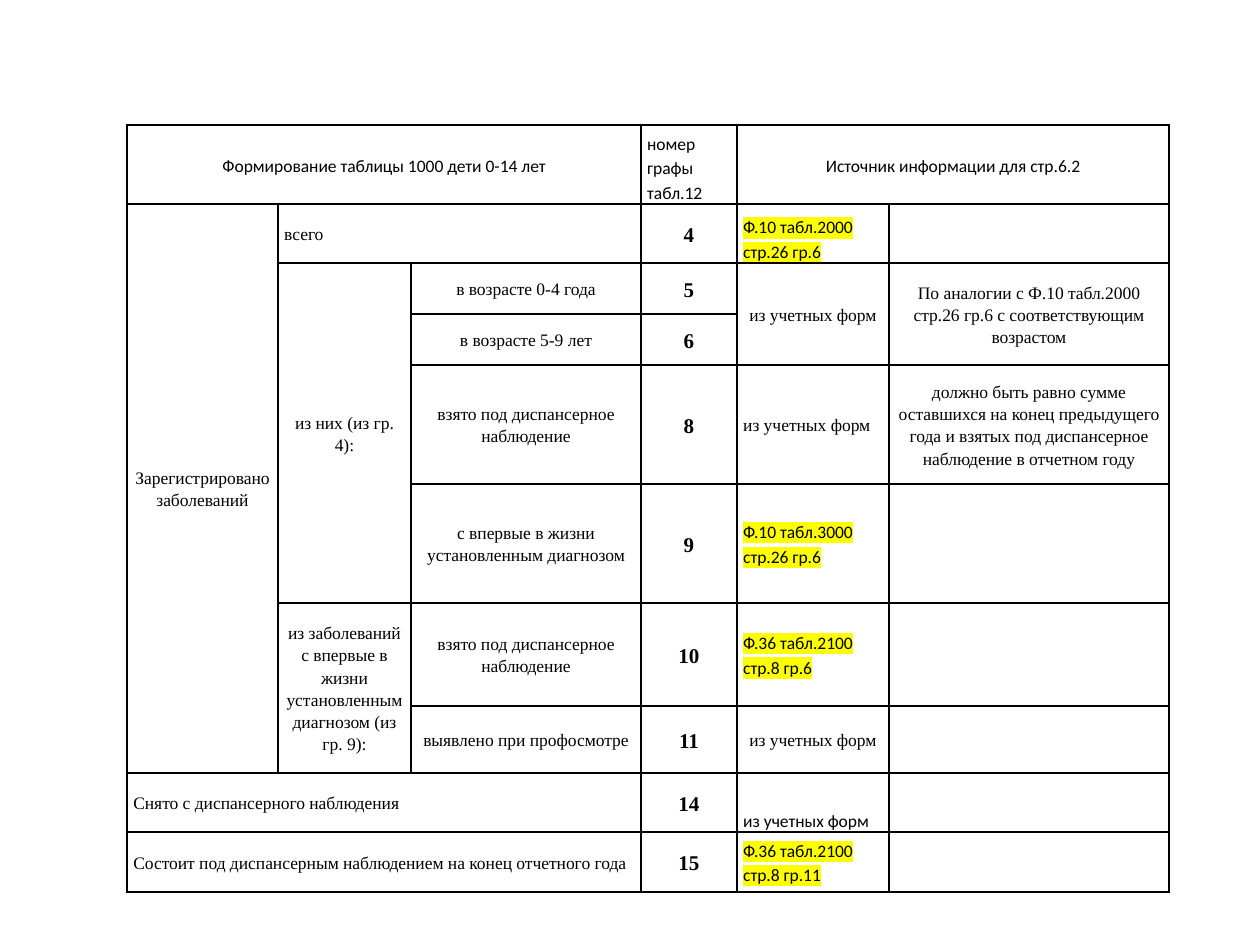
from lxml import etree
from pptx import Presentation, util as u
from pptx.dml.color import RGBColor
from pptx.enum import text
from pptx.oxml.ns import qn

PX = 914400 // 126
SANS, SERIF = "Calibri", "Times New Roman"
LEFT, CENTER = text.PP_ALIGN.LEFT, text.PP_ALIGN.CENTER
MIDDLE, BOTTOM = text.MSO_ANCHOR.MIDDLE, text.MSO_ANCHOR.BOTTOM
BLACK, YELLOW = "000000", "FFFF00"

COLS = [151, 133, 230, 96, 152, 280]
ROWS = [79, 59, 51, 51, 119, 119, 103, 67, 59, 60]

STYLES = {
    "head": (SANS, 10, False, CENTER, None),
    "plain": (SANS, 10, False, LEFT, None),
    "mark": (SANS, 10, False, LEFT, YELLOW),
    "label": (SERIF, 10, False, CENTER, None),
    "left": (SERIF, 10, False, LEFT, None),
    "number": (SERIF, 12, True, CENTER, None),
}
FORMS = "из учетных форм"
TAKEN = "взято под диспансерное наблюдение"

CELLS = [
    (0, 0, 1, 3, "head", "Формирование таблицы 1000 дети 0-14 лет"),
    (0, 3, 1, 1, "plain", "номер графы табл.12"),
    (0, 4, 1, 2, "head", "Источник информации для стр.6.2"),
    (1, 0, 7, 1, "label", "Зарегистрировано заболеваний"),
    (1, 1, 1, 2, "left", "всего"),
    (1, 4, 1, 1, "mark", "Ф.10 табл.2000 стр.26 гр.6"),
    (2, 1, 4, 1, "label", "из них (из гр. 4):"),
    (2, 2, 1, 1, "label", "в возрасте 0-4 года"),
    (2, 4, 2, 1, "label", FORMS),
    (2, 5, 2, 1, "label", "По аналогии с Ф.10 табл.2000 стр.26 гр.6 с соответствующим возрастом"),
    (3, 2, 1, 1, "label", "в возрасте 5-9 лет"),
    (4, 2, 1, 1, "label", TAKEN),
    (4, 4, 1, 1, "left", FORMS),
    (4, 5, 1, 1, "label", "должно быть равно сумме оставшихся на конец предыдущего года "
                          "и взятых под диспансерное наблюдение в отчетном году"),
    (5, 2, 1, 1, "label", "с впервые в жизни установленным диагнозом"),
    (5, 4, 1, 1, "mark", "Ф.10 табл.3000 стр.26 гр.6"),
    (6, 1, 2, 1, "label", "из заболеваний с впервые в жизни установленным диагнозом (из гр. 9):"),
    (6, 2, 1, 1, "label", TAKEN),
    (6, 4, 1, 1, "mark", "Ф.36 табл.2100 стр.8 гр.6"),
    (7, 2, 1, 1, "label", "выявлено при профосмотре"),
    (7, 4, 1, 1, "label", FORMS),
    (8, 0, 1, 3, "left", "Снято с диспансерного наблюдения"),
    (8, 4, 1, 1, "plain", FORMS),
    (9, 0, 1, 3, "left", "Состоит под диспансерным наблюдением на конец отчетного года"),
    (9, 4, 1, 1, "mark", "Ф.36 табл.2100 стр.8 гр.11"),
]
NUMBERS = ["4", "5", "6", "8", "9", "10", "11", "14", "15"]
CELLS += [(i, 3, 1, 1, "number", n) for i, n in enumerate(NUMBERS, 1)]
AT_BOTTOM = {(0, 3), (1, 4), (8, 4)}


def rgb(value):
    return RGBColor.from_string(value)


def add_color(parent, tag, value):
    el = etree.SubElement(parent, qn(tag))
    etree.SubElement(el, qn("a:srgbClr"), val=value)
    return el


def style_cell(cell):
    cell.fill.background()
    cell.margin_left = cell.margin_right = u.Inches(0.05)
    cell.margin_top = cell.margin_bottom = 0
    tcPr = cell._tc.get_or_add_tcPr()
    for i, side in enumerate(("a:lnL", "a:lnR", "a:lnT", "a:lnB")):
        ln = etree.Element(qn(side), w=str(u.Pt(1)))
        add_color(ln, "a:solidFill", BLACK)
        tcPr.insert(i, ln)


def write(cell, words, style, anchor):
    font, size, bold, align, mark = STYLES[style]
    cell.text_frame.text = words
    cell.vertical_anchor = anchor
    p = cell.text_frame.paragraphs[0]
    p.alignment, p.line_spacing, p.space_before = align, 1.15, u.Pt(6)
    r = p.runs[0]
    r.font.name, r.font.size, r.font.bold = font, u.Pt(size), bold
    r.font.color.rgb = rgb(BLACK)
    if mark:
        rPr = r.font._element
        rPr.find(qn("a:latin")).addprevious(add_color(rPr, "a:highlight", mark))


prs = Presentation()
prs.slide_width, prs.slide_height = u.Inches(10), u.Inches(7.5)
s = prs.slides.add_slide(prs.slide_layouts[6])
table = s.shapes.add_table(len(ROWS), len(COLS), 127 * PX, 125 * PX,
                           sum(COLS) * PX, sum(ROWS) * PX).table
table.first_row = table.horz_banding = False
for col, width in zip(table.columns, COLS):
    col.width = width * PX
for row, height in zip(table.rows, ROWS):
    row.height = height * PX
    for cell in row.cells:
        style_cell(cell)

for row, col, down, across, style, words in CELLS:
    cell = table.cell(row, col)
    if down * across > 1:
        cell.merge(table.cell(row + down - 1, col + across - 1))
    write(cell, words, style, BOTTOM if (row, col) in AT_BOTTOM else MIDDLE)

prs.save("out.pptx")
